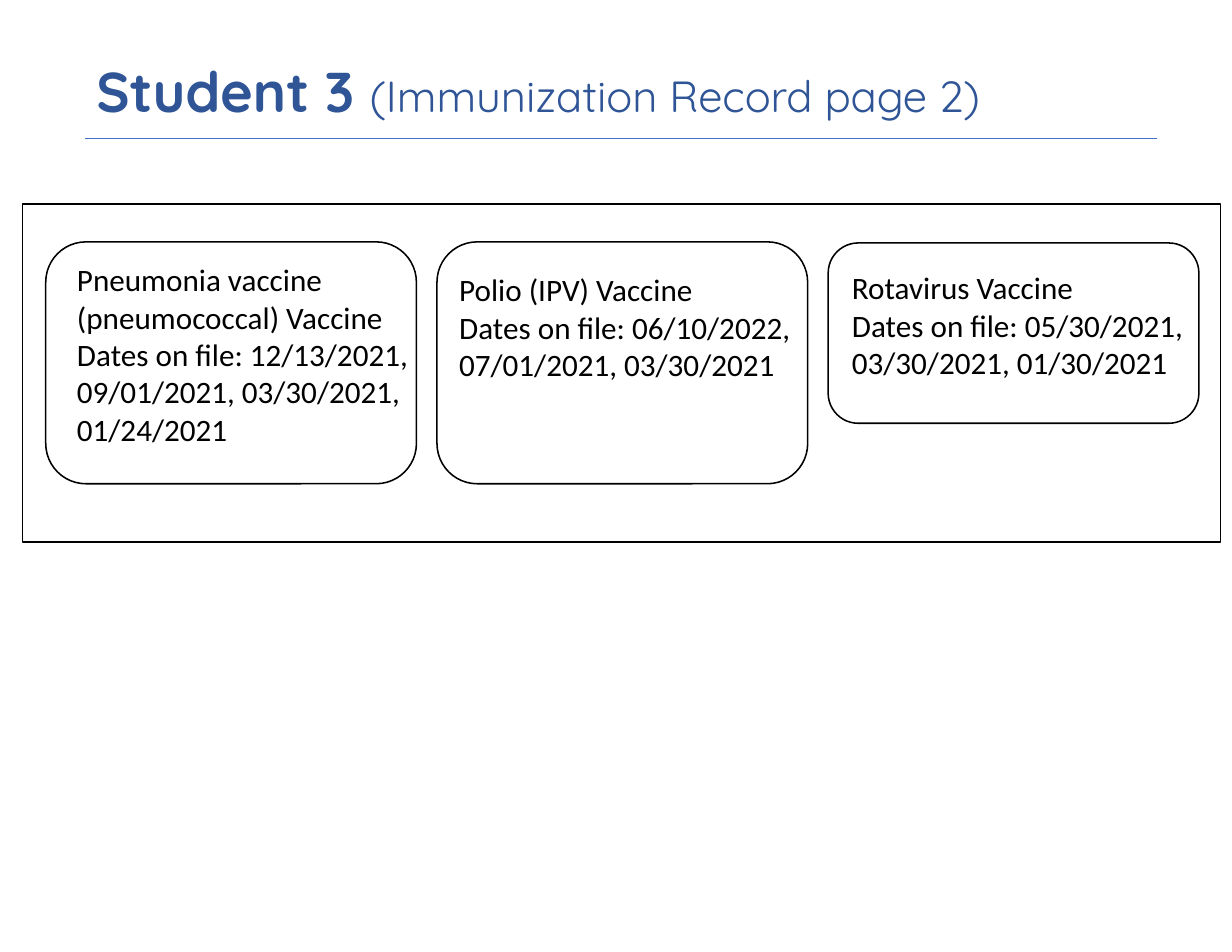
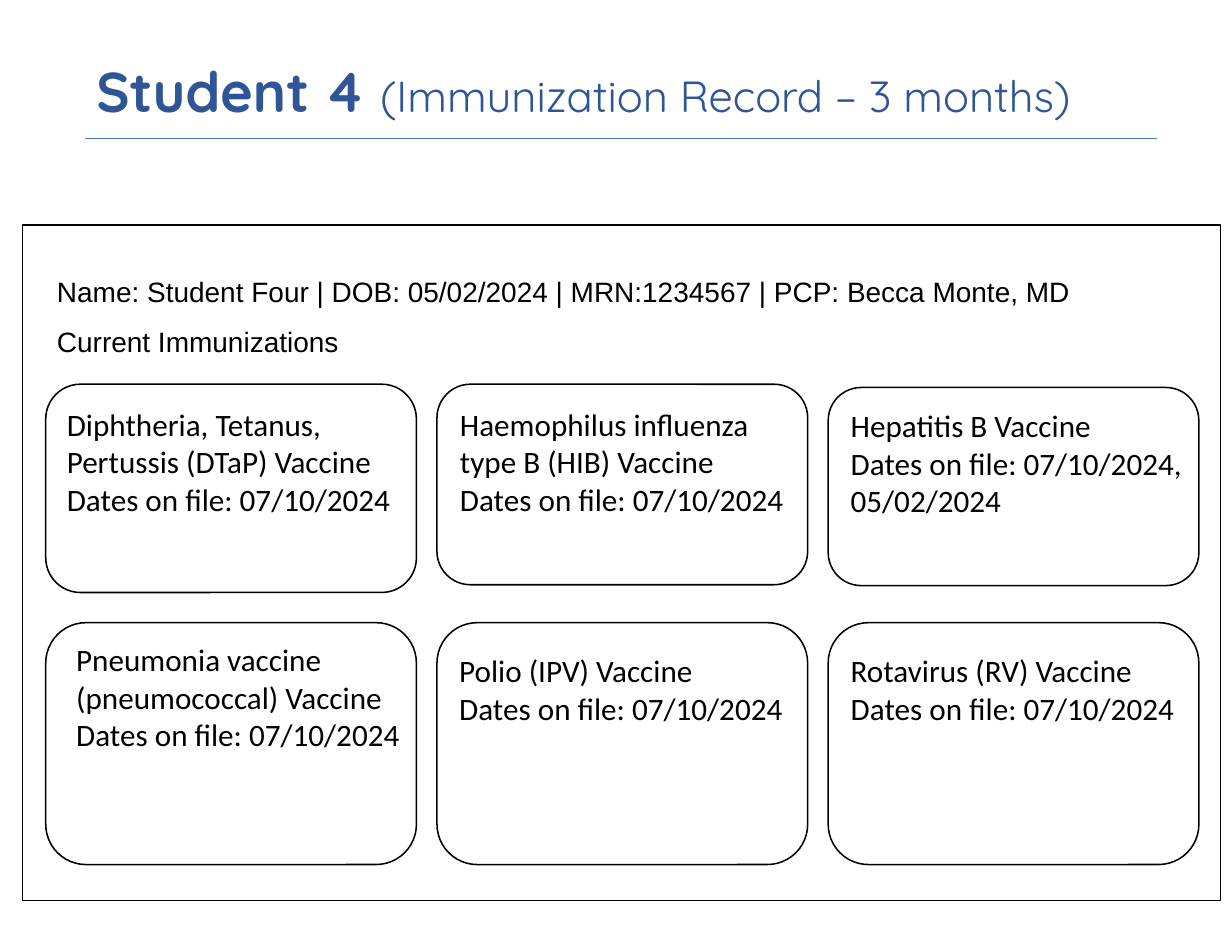
from dataclasses import dataclass

from lxml import etree
from pptx import Presentation
from pptx.dml.color import RGBColor
from pptx.enum.shapes import MSO_CONNECTOR, MSO_SHAPE
from pptx.enum.text import MSO_ANCHOR, MSO_AUTO_SIZE, PP_ALIGN
from pptx.oxml.ns import qn
from pptx.util import Pt

RECTANGLE = MSO_SHAPE.RECTANGLE
ROUNDED = MSO_SHAPE.ROUNDED_RECTANGLE
STRAIGHT = MSO_CONNECTOR.STRAIGHT
MIDDLE = MSO_ANCHOR.MIDDLE
NO_AUTOFIT = MSO_AUTO_SIZE.NONE
LEFT = PP_ALIGN.LEFT
TITLE_ONLY = 5

# A card: vaccine, dates, top, height, then the offset of its text (x, y).
# A row holds one card per column.
RECORDS = [
    {
        "student": "Student 3 ",
        "record": "(Immunization Record page 2)",
        "frame": (131, 217.4),
        "patient": [],
        "rows": [
            [
                ("Pneumonia vaccine (pneumococcal) Vaccine",
                 "12/13/2021, 09/01/2021, 03/30/2021, 01/24/2021",
                 155.5, 155.5, 13, 8.6),
                ("Polio (IPV) Vaccine", "06/10/2022, 07/01/2021, 03/30/2021",
                 155.5, 155.5, 7.2, 15.1),
                ("Rotavirus Vaccine", "05/30/2021, 03/30/2021, 01/30/2021",
                 156.2, 115.9, 8.2, 13),
            ],
        ],
    },
    {
        "student": "Student 4 ",
        "record": "(Immunization Record – 3 months)",
        "frame": (144.7, 434.2),
        "patient": [
            "Name: Student Four | DOB: 05/02/2024 | MRN:1234567 | PCP: Becca Monte, MD",
            "Current Immunizations",
        ],
        "rows": [
            [
                ("Diphtheria, Tetanus, Pertussis (DTaP) Vaccine", "07/10/2024",
                 247, 133.9, 6.5, 10),
                ("Haemophilus influenza type B (HIB) Vaccine", "07/10/2024",
                 247, 128.9, 7.7, 10),
                ("Hepatitis B Vaccine", "07/10/2024, 05/02/2024",
                 249.1, 127.4, 7.4, 8.7),
            ],
            [
                ("Pneumonia vaccine (pneumococcal) Vaccine", "07/10/2024",
                 400.3, 155.5, 12.5, 8),
                ("Polio (IPV) Vaccine", "07/10/2024", 400.3, 155.5, 7.2, 15.1),
                ("Rotavirus (RV) Vaccine", "07/10/2024", 400.3, 155.5, 7.4, 15.1),
            ],
        ],
    },
]


@dataclass(frozen=True)
class Theme:
    title = RGBColor(0x2F, 0x55, 0x97)
    rule = RGBColor(0x44, 0x72, 0xC4)
    ink = RGBColor(0, 0, 0)
    title_font = "Quicksand"
    card_font = "Calibri"
    patient_font = "Arial"
    student_size = 36
    record_size = 28
    card_size = 20
    patient_size = 18
    rule_width = 0.75
    outline_width = 1


THEME = Theme()

SLIDE_WIDTH, SLIDE_HEIGHT = 792, 612
TITLE_LEFT, TITLE_TOP, TITLE_WIDTH, TITLE_HEIGHT = 54.7, 32.4, 683.3, 56.9
RULE_Y, RULE_RIGHT = 89.3, 743.8
FRAME_LEFT, FRAME_WIDTH = 14.4, 770.4
CARDS_LEFT, CARD_WIDTH, CARD_GAP = 29.4, 238.3, 13.2
CARD_TEXT_WIDTH = 230.4
PATIENT_BOX = (29.5, 162, 733.7, 69.1)


def points(*lengths):
    return [Pt(length) for length in lengths]


def add_run(paragraph, text, font_name, size, color, bold=False):
    run = paragraph.add_run()
    run.text = text
    font = run.font
    font.name, font.size, font.bold = font_name, Pt(size), bold
    font.color.rgb = color


def add_title(slide, student, record):
    title = slide.shapes.title
    title.left, title.top, title.width, title.height = points(
        TITLE_LEFT, TITLE_TOP, TITLE_WIDTH, TITLE_HEIGHT)
    frame = title.text_frame
    frame.auto_size = NO_AUTOFIT
    frame.vertical_anchor = MIDDLE
    heading = frame.paragraphs[0]
    heading.alignment = LEFT
    heading.line_spacing = 0.9
    add_run(heading, student, THEME.title_font, THEME.student_size, THEME.title, bold=True)
    add_run(heading, record, THEME.title_font, THEME.record_size, THEME.title)

    rule = slide.shapes.add_connector(
        STRAIGHT, *points(TITLE_LEFT, RULE_Y, RULE_RIGHT, RULE_Y))
    rule.line.color.rgb = THEME.rule
    rule.line.width = Pt(THEME.rule_width)
    properties = rule._element.find(qn("p:spPr"))
    etree.SubElement(properties, qn("a:effectLst"))


def add_outline(slide, kind, *box):
    outline = slide.shapes.add_shape(kind, *points(*box))
    outline.shadow.inherit = False
    outline.fill.background()
    outline.line.color.rgb = THEME.ink
    outline.line.width = Pt(THEME.outline_width)


def add_text(slide, box, lines, font_name, size, spacing=1.0):
    frame = slide.shapes.add_textbox(*points(*box)).text_frame
    frame.word_wrap = True
    for index, line in enumerate(lines):
        paragraph = frame.add_paragraph() if index else frame.paragraphs[0]
        paragraph.line_spacing = spacing
        add_run(paragraph, line, font_name, size, THEME.ink)


def add_card(slide, column, card):
    vaccine, dates, top, height, text_x, text_y = card
    left = CARDS_LEFT + column * (CARD_WIDTH + CARD_GAP)
    add_outline(slide, ROUNDED, left, top, CARD_WIDTH, height)
    add_text(slide, (left + text_x, top + text_y, CARD_TEXT_WIDTH, height - 2 * text_y),
             [vaccine, f"Dates on file: {dates}"], THEME.card_font, THEME.card_size)


def add_record(deck, record):
    slide = deck.slides.add_slide(deck.slide_layouts[TITLE_ONLY])
    add_title(slide, record["student"], record["record"])
    top, height = record["frame"]
    add_outline(slide, RECTANGLE, FRAME_LEFT, top, FRAME_WIDTH, height)
    if record["patient"]:
        add_text(slide, PATIENT_BOX, record["patient"],
                 THEME.patient_font, THEME.patient_size, spacing=1.5)
    for row in record["rows"]:
        for column, card in enumerate(row):
            add_card(slide, column, card)


def main():
    deck = Presentation()
    deck.slide_width, deck.slide_height = points(SLIDE_WIDTH, SLIDE_HEIGHT)
    for record in RECORDS:
        add_record(deck, record)
    deck.save("out.pptx")


if __name__ == "__main__":
    main()
